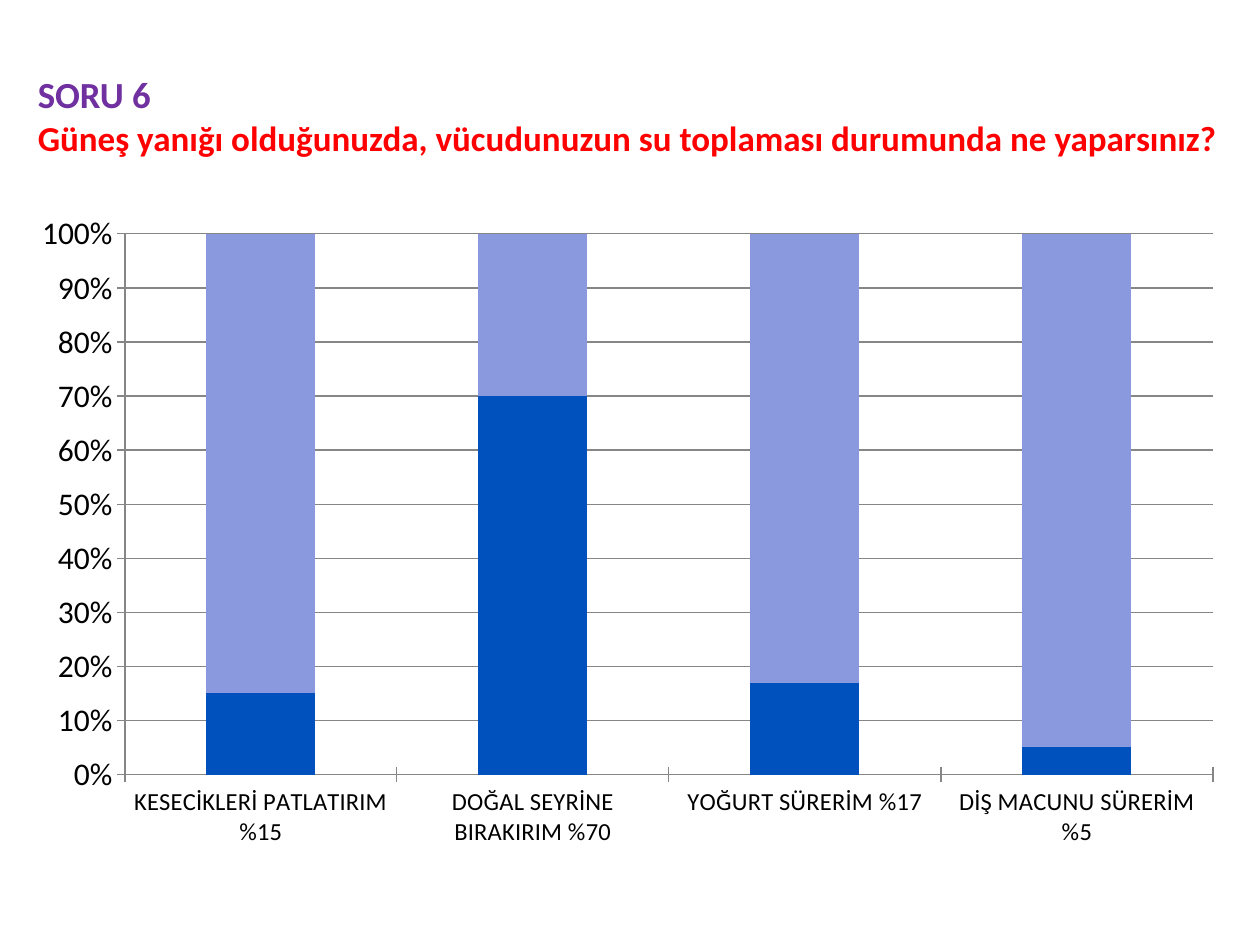
from pptx import Presentation
from pptx import util as u
from pptx.chart.data import CategoryChartData
from pptx.dml.color import RGBColor
from pptx.enum import chart as charts, text

FONT = "Calibri"
GRAY = "868686"
ANSWERS = {
    "KESECİKLERİ PATLATIRIM %15": 15,
    "DOĞAL SEYRİNE BIRAKIRIM %70": 70,
    "YOĞURT SÜRERİM %17": 17,
    "DİŞ MACUNU SÜRERİM %5": 5,
}


def color(value):
    return RGBColor.from_string(value)


def style_font(font, size, value, bold=False):
    font.name = FONT
    font.size = u.Pt(size)
    font.bold = bold
    font.color.rgb = color(value)


def style_line(line):
    line.color.rgb = color(GRAY)
    line.width = u.Pt(0.75)


def add_question(page):
    box = page.shapes.title
    box.left, box.top = u.Inches(0.2), u.Inches(0.29)
    box.width, box.height = u.Inches(10), u.Inches(1.25)
    frame = box.text_frame
    frame.word_wrap = True
    frame.auto_size = text.MSO_AUTO_SIZE.NONE
    frame.vertical_anchor = text.MSO_ANCHOR.MIDDLE
    frame.text = (
        "SORU 6\v"
        "Güneş yanığı olduğunuzda, vücudunuzun su toplaması durumunda ne yaparsınız?"
    )
    para = frame.paragraphs[0]
    para.alignment = text.PP_ALIGN.LEFT
    number, question = para.runs
    style_font(number.font, 21, "7030A0", bold=True)
    style_font(question.font, 20, "FF0000", bold=True)


def style_axis(axis, size):
    axis.major_tick_mark = charts.XL_TICK_MARK.CROSS
    axis.minor_tick_mark = charts.XL_TICK_MARK.NONE
    style_font(axis.tick_labels.font, size, "000000")
    style_line(axis.format.line)


def add_answers_chart(page):
    data = CategoryChartData()
    data.categories = list(ANSWERS)
    data.add_series("Series 1", list(ANSWERS.values()))
    data.add_series("Series 2", [100 - share for share in ANSWERS.values()])
    chart = page.shapes.add_chart(
        charts.XL_CHART_TYPE.COLUMN_STACKED_100,
        u.Inches(0.14), u.Inches(1.6), u.Inches(9.68), u.Inches(5.23), data,
    ).chart
    chart.has_legend = False
    chart.has_title = False
    style_font(chart.font, 18, "000000")
    style_axis(chart.category_axis, 14)

    percent_axis = chart.value_axis
    style_axis(percent_axis, 18)
    percent_axis.minimum_scale = 0
    percent_axis.maximum_scale = 1
    percent_axis.major_unit = 0.1
    percent_axis.tick_labels.number_format = "0%"
    percent_axis.tick_labels.number_format_is_linked = False
    percent_axis.has_major_gridlines = True
    style_line(percent_axis.major_gridlines.format.line)

    plot = chart.plots[0]
    plot.gap_width = 150
    plot.overlap = 100
    plot.vary_by_categories = False
    for series, value in zip(plot.series, ("0050BE", "8A98DE")):
        series.format.fill.solid()
        series.format.fill.fore_color.rgb = color(value)


def main():
    deck = Presentation()
    deck.slide_width, deck.slide_height = u.Inches(10), u.Inches(7.5)
    page = deck.slides.add_slide(deck.slide_layouts[5])
    add_question(page)
    add_answers_chart(page)
    deck.save("out.pptx")


if __name__ == "__main__":
    main()
